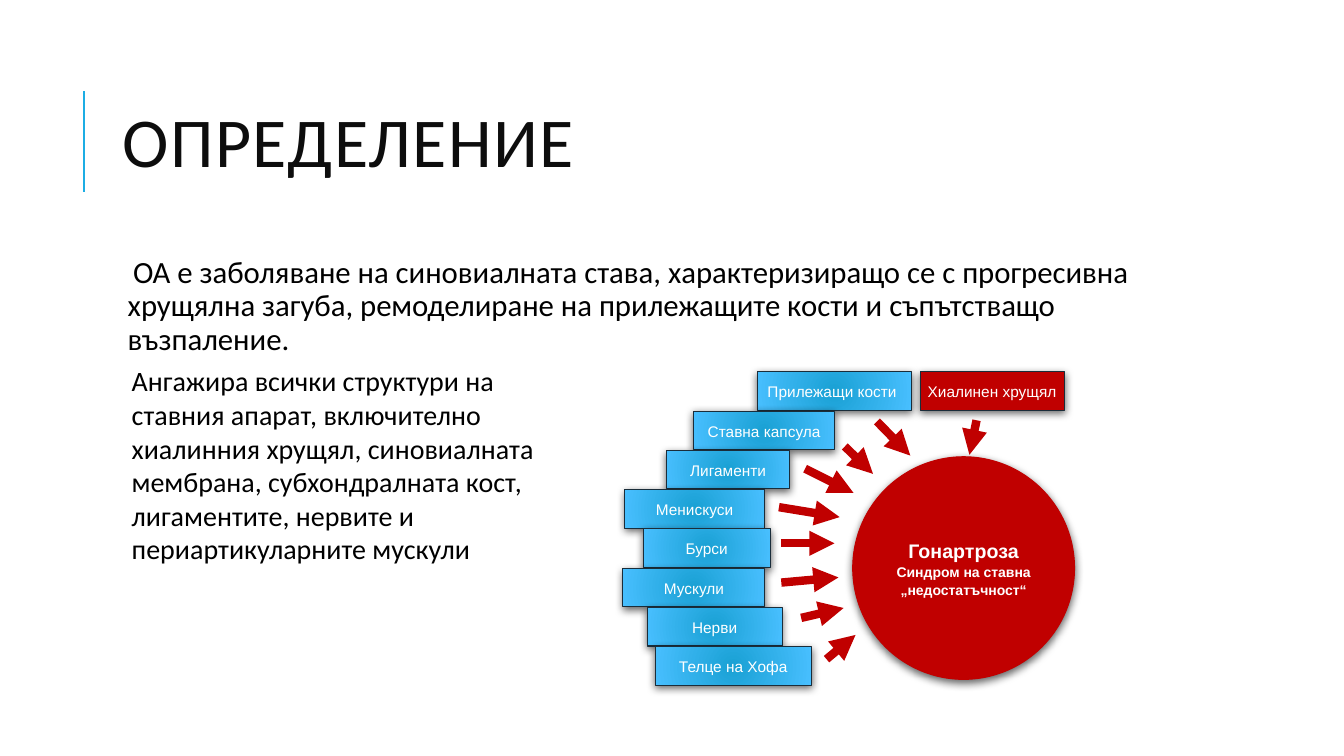
"""Build the slide that defines osteoarthritis and the joint structures it involves."""
import lxml.etree
import pptx
import pptx.dml.color
import pptx.enum.shapes
import pptx.enum.text
import pptx.util
from pptx.oxml.ns import qn

Cm = pptx.util.Cm
Pt = pptx.util.Pt
SHAPE = pptx.enum.shapes.MSO_SHAPE
ANCHOR = pptx.enum.text.MSO_ANCHOR
ALIGN = pptx.enum.text.PP_ALIGN


def color(hex_value):
    return pptx.dml.color.RGBColor.from_string(hex_value)


def add_xml(parent, tag, **attributes):
    return lxml.etree.SubElement(parent, qn(tag), attributes)


class JointSlide:
    RED = "C00000"
    ACCENT = "1CADE4"
    BLUES = ("1AA1D4", "48BFFF")
    OUTLINE = "1A2D3A"
    HEADING_FONT = "Calibri"
    LABEL_FONT = "Arial"

    def __init__(self, slide):
        self.slide = slide

    def styled_run(self, paragraph, text, size, font, ink, bold=False):
        run = paragraph.add_run()
        run.text = text
        run.font.size = Pt(size)
        run.font.name = font
        run.font.bold = bold
        run.font.color.rgb = color(ink)

    def text(self, box, text, size, ink="000000", inset=0.25,
             anchor=ANCHOR.TOP, spacing=1.0, before=0, after=0):
        frame = self.slide.shapes.add_textbox(*map(Cm, box)).text_frame
        frame.word_wrap = True
        frame.vertical_anchor = anchor
        frame.margin_left = frame.margin_right = Cm(inset)
        frame.margin_top = frame.margin_bottom = Cm(0.13)
        paragraph = frame.paragraphs[0]
        paragraph.line_spacing = spacing
        paragraph.space_before = Pt(before)
        paragraph.space_after = Pt(after)
        self.styled_run(paragraph, text, size, self.HEADING_FONT, ink)
        return paragraph

    def title(self, box, text):
        paragraph = self.text(box, text, 50, "0D0D0D", anchor=ANCHOR.MIDDLE, spacing=0.8)
        paragraph.runs[0].font._element.set("spc", "100")

    def definition(self, box, text):
        paragraph = self.text(box, text, 22, inset=0.13, spacing=0.9, before=12, after=2)
        properties = paragraph._p.get_or_add_pPr()
        properties.set("marL", str(Cm(0.25)))
        properties.set("indent", str(Cm(-0.25)))
        bullet_color = add_xml(properties, "a:buClr")
        add_xml(bullet_color, "a:srgbClr", val=self.ACCENT)
        add_xml(properties, "a:buChar", char=" ")

    def line(self, ends, ink, width, arrow=False):
        connector = self.slide.shapes.add_connector(
            pptx.enum.shapes.MSO_CONNECTOR.STRAIGHT, *map(Cm, ends))
        connector.line.color.rgb = color(ink)
        connector.line.width = Pt(width)
        if arrow:
            add_xml(connector.line._get_or_add_ln(), "a:tailEnd", type="triangle")
        add_xml(connector._element.spPr, "a:effectLst")

    def blend(self, shape):
        shape.fill.gradient()
        for stop, shade in zip(shape.fill.gradient_stops, self.BLUES):
            stop.color.rgb = color(shade)
        gradient = shape._element.spPr.find(qn("a:gradFill"))
        gradient.remove(gradient.find(qn("a:lin")))
        circle = add_xml(gradient, "a:path", path="circle")
        add_xml(circle, "a:fillToRect", **dict.fromkeys("ltrb", "100000"))

    def shape(self, kind, box, lines, outline, blended=False, inset=0.0, after=0):
        shape = self.slide.shapes.add_shape(kind, *map(Cm, box))
        if blended:
            self.blend(shape)
        else:
            shape.fill.solid()
            shape.fill.fore_color.rgb = color(self.RED)
        shape.line.color.rgb = color(outline)
        shape.line.width = Pt(0.75)
        shape.shadow.inherit = False
        effects = shape._element.spPr.find(qn("a:effectLst"))
        shadow = add_xml(effects, "a:outerShdw", blurRad=str(Pt(6)), dist=str(Pt(2)),
                         dir="5400000", algn="ctr", rotWithShape="0")
        shade = add_xml(shadow, "a:srgbClr", val="000000")
        add_xml(shade, "a:alpha", val="60000")
        frame = shape.text_frame
        frame.word_wrap = True
        frame.vertical_anchor = ANCHOR.MIDDLE
        frame.margin_left = frame.margin_right = Cm(inset)
        frame.margin_top = frame.margin_bottom = Cm(inset)
        for index, (text, size, bold) in enumerate(lines):
            paragraph = frame.add_paragraph() if index else frame.paragraphs[0]
            paragraph.alignment = ALIGN.CENTER
            paragraph.line_spacing = 1.07
            paragraph.space_after = Pt(after)
            self.styled_run(paragraph, text, size, self.LABEL_FONT, "FFFFFF", bold)

    def structure(self, name, row, left, width, arrow, blended=True):
        box = (left, 9.37 + 0.99 * row, width, 0.97)
        self.shape(SHAPE.RECTANGLE, box, [(name, 11, False)], self.OUTLINE,
                   blended, 0.1 if blended else 0, 8)
        self.line(arrow, self.RED, 6, arrow=True)


STRUCTURES = [
    ("Прилежащи кости ", 19.08, 3.89, (22.10, 10.62, 22.94, 11.48)),
    ("Ставна капсула", 17.48, 3.56, (21.29, 11.25, 22.00, 11.94)),
    ("Лигаменти", 16.79, 3.12, (20.29, 11.81, 21.51, 12.42)),
    ("Менискуси", 15.75, 3.51, (19.63, 12.78, 21.16, 13.03)),
    ("Бурси", 16.21, 3.20, (19.69, 13.69, 21.03, 13.69)),
    ("Мускули", 15.70, 3.58, (19.69, 14.68, 21.13, 14.55)),
    ("Нерви", 16.31, 3.40, (20.19, 15.57, 21.26, 15.32)),
    ("Телце на Хофа", 16.51, 3.94, (20.83, 16.61, 21.56, 16.00)),
]


def main():
    presentation = pptx.Presentation()
    presentation.slide_width = Cm(33.87)
    presentation.slide_height = Cm(19.05)
    page = JointSlide(presentation.slides.add_slide(presentation.slide_layouts[6]))

    page.line((2.11, 4.83, 2.11, 2.29), page.ACCENT, 1.5)
    page.title((2.84, 1.63, 27, 4.17), "ОПРЕДЕЛЕНИЕ")
    page.definition(
        (2.84, 6.35, 27, 11.18),
        "ОА е заболяване на синовиалната става, характеризиращо се с прогресивна "
        "хрущялна загуба, ремоделиране на прилежащите кости и съпътстващо възпаление.")
    page.shape(SHAPE.OVAL, (21.49, 11.51, 5.59, 5.61),
               [("Гонартроза", 14, True), ("Синдром на ставна „недостатъчност“", 10, True)],
               page.RED)
    for row, (name, left, width, arrow) in enumerate(STRUCTURES):
        page.structure(name, row, left, width, arrow)
    page.structure("Хиалинен хрущял", 0, 23.19, 3.63, (24.61, 10.59, 24.43, 11.46), False)
    page.text(
        (3.07, 9.04, 11.86, 7.9),
        "Ангажира всички структури на ставния апарат, включително хиалинния хрущял, "
        "синовиалната мембрана, субхондралната кост, лигаментите, нервите и "
        "периартикуларните мускули", 20, before=10)

    presentation.save("out.pptx")


if __name__ == "__main__":
    main()
